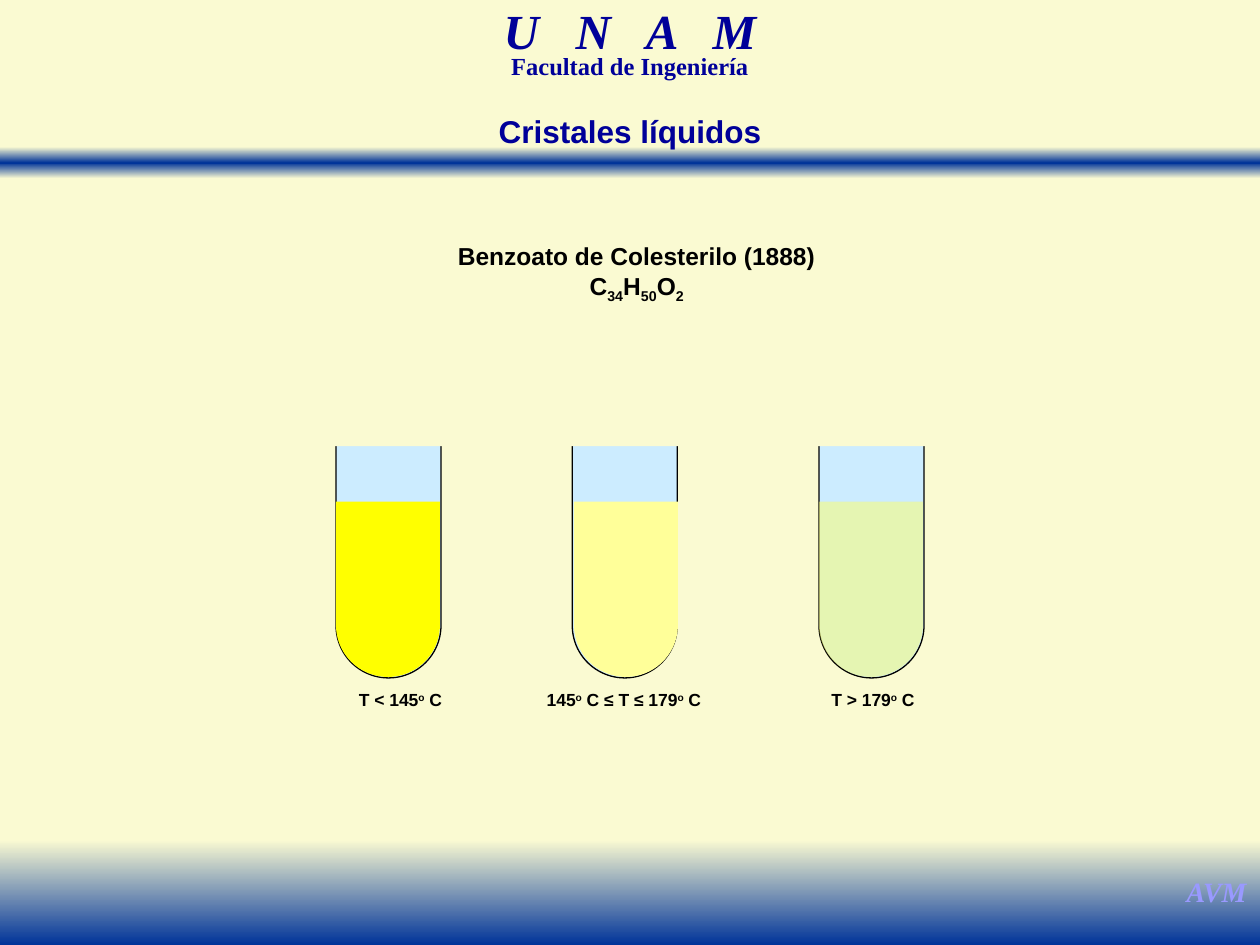
import copy
import pptx
import pptx.util
import pptx.dml.color
import pptx.enum.shapes
import pptx.enum.text
import pptx.oxml.ns
import lxml.etree

Pt = pptx.util.Pt
RGB = pptx.dml.color.RGBColor.from_string
KIND = pptx.enum.shapes.MSO_SHAPE
TEXT = pptx.enum.text
MID = TEXT.PP_ALIGN.CENTER
LEFT = TEXT.PP_ALIGN.LEFT

THEME = {
    "back": "FAFAD2", "band": "003399", "glass": "CCECFF", "edge": "000000",
    "sign": dict(name="Times New Roman", size=16, color="9999FF", bold=True, italic=True),
    "school": dict(name="Times New Roman", size=28, color="000099", bold=True, italic=True),
    "unit": dict(name="Times New Roman", size=14, color="000099", bold=True, italic=False),
    "title": dict(name="Arial", size=18, color="000099", bold=True, italic=False),
    "body": dict(name="Arial", size=14, color="000000", bold=True, italic=False),
    "label": dict(name="Arial", size=10, color="000000", bold=True, italic=False),
}

# A line is a list of (text, run attributes).
SUB, SUP, WIDE = {"baseline": "-25000"}, {"baseline": "30000"}, {"spc": "700"}
DEGREE = ("o", SUP)
TITLE = [[("Cristales líquidos", {})]]
FORMULA = [("C", {}), ("34", SUB), ("H", {}), ("50", SUB), ("O", {}), ("2", SUB)]

# lines, box, style, alignment, spacing of first line, wrap
TEXTS = [
    ([[("AVM", {})]], (670.3, 496, 49.7, 26.6), "sign", MID, 1, False),
    ([[("U N A ", WIDE), ("M", {})]], (219, 6, 282, 31), "school", MID, 0.7, True),
    ([[("Facultad de Ingeniería", {})]], (231, 30, 258, 19), "unit", MID, 0.7, True),
    ([[("Benzoato de Colesterilo (1888)", {})], FORMULA],
     (254, 126, 219.6, 49.7), "body", MID, 1.5, False),
]

# tube left, liquid left, liquid colour, opacity, label, label left, label width, wrap
TUBES = [
    (192, 192, "FFFF00", 100, [("T < 145", {}), DEGREE, (" C", {})], 198, 62.6, False),
    (327, 328, "FFFF99", 100,
     [("145", {}), DEGREE, (" C ≤ T ≤ 179", {}), DEGREE, (" C", {})], 305.3, 109.4, True),
    (468, 468, "FFFF66", 50, [("T > 179", {}), DEGREE, (" C", {})], 468, 62.6, False),
]


def put(item, box):
    for key, value in zip(("left", "top", "width", "height"), box):
        setattr(item, key, Pt(value))


def write(item, lines, style, align, space=1, wrap=True):
    frame = item.text_frame
    look = {"word_wrap": wrap, "vertical_anchor": TEXT.MSO_ANCHOR.TOP,
            "auto_size": TEXT.MSO_AUTO_SIZE.SHAPE_TO_FIT_TEXT}
    for key, value in look.items():
        setattr(frame, key, value)
    for num, line in enumerate(lines):
        para = frame.add_paragraph() if num else frame.paragraphs[0]
        para.alignment = align
        para.line_spacing = 1.0 if num else float(space)
        for text, marks in line:
            run = para.add_run()
            run.text = text
            for key, value in THEME[style].items():
                if key == "color":
                    run.font.color.rgb = RGB(value)
                else:
                    setattr(run.font, key, Pt(value) if key == "size" else value)
            for key, value in marks.items():
                run._r.get_or_add_rPr().set(key, value)


def label(home, lines, box, *look):
    item = home.add_textbox(*map(Pt, box))
    write(item, lines, *look)


def shape(home, kind, box, fill, line=None, adjust=()):
    item = home.add_shape(kind, *map(Pt, box))
    item.shadow.inherit = False
    for num, value in enumerate(adjust):
        item.adjustments[num] = value
    item.fill.solid()
    item.fill.fore_color.rgb = RGB(fill)
    if line:
        item.line.color.rgb = RGB(line)
        item.line.width = Pt(0.75)
    else:
        item.line.fill.background()
    return item


def band(home, box, tones):
    """Draw a full-width bar that fades from top to bottom through the tones."""
    fill = shape(home, KIND.RECTANGLE, box, tones[0]).fill
    fill.gradient()
    fill.gradient_angle = 270
    first = fill.gradient_stops[0]._gs
    for _ in tones[2:]:
        first.addnext(copy.deepcopy(first))
    for num, (stop, tone) in enumerate(zip(fill.gradient_stops, tones)):
        stop.color.rgb = RGB(tone)
        stop.position = num / (len(tones) - 1)


def fade(item, percent):
    """Set the opacity of a solid fill."""
    qn = pptx.oxml.ns.qn
    tone = item.element.spPr.find(qn("a:solidFill")).find(qn("a:srgbClr"))
    lxml.etree.SubElement(tone, qn("a:alpha")).set("val", str(percent * 1000))


def tube(home, left, inner, tone, solid, line, start, width, wrap):
    parts = home.add_group_shape().shapes
    shape(parts, KIND.ROUNDED_RECTANGLE, (left, 219.6, 60, 167.8),
          THEME["glass"], THEME["edge"], [0.5])
    shape(parts, KIND.RECTANGLE, (left - 12, 213, 84, 42), THEME["back"])
    liquid = shape(parts, KIND.ROUND_2_SAME_RECTANGLE, (inner, 286.6, 59.4, 100.2),
                   tone, adjust=[0, 0.5])
    if solid < 100:
        fade(liquid, solid)
    label(parts, [line], (start, 390.2, width, 19.4), "label", LEFT, 1, wrap)


def main():
    deck = pptx.Presentation()
    deck.slide_width, deck.slide_height = Pt(720), Pt(540)
    slide = deck.slides.add_slide(deck.slide_layouts[5])
    back = slide.background.fill
    back.solid()
    back.fore_color.rgb = RGB(THEME["back"])

    home = slide.shapes
    pale, deep = THEME["back"], THEME["band"]
    band(home, (0, 84, 720, 18), [pale, deep, pale])
    band(home, (0, 480, 720, 60), [pale, deep])
    for row in TEXTS:
        label(home, *row)
    for row in TUBES:
        tube(home, *row)

    title = home.title
    put(title, (204, 60.5, 312, 28.8))
    write(title, TITLE, "title", MID)
    title.element.getparent().append(title.element)  # in front of the band
    deck.save("out.pptx")


if __name__ == "__main__":
    main()
